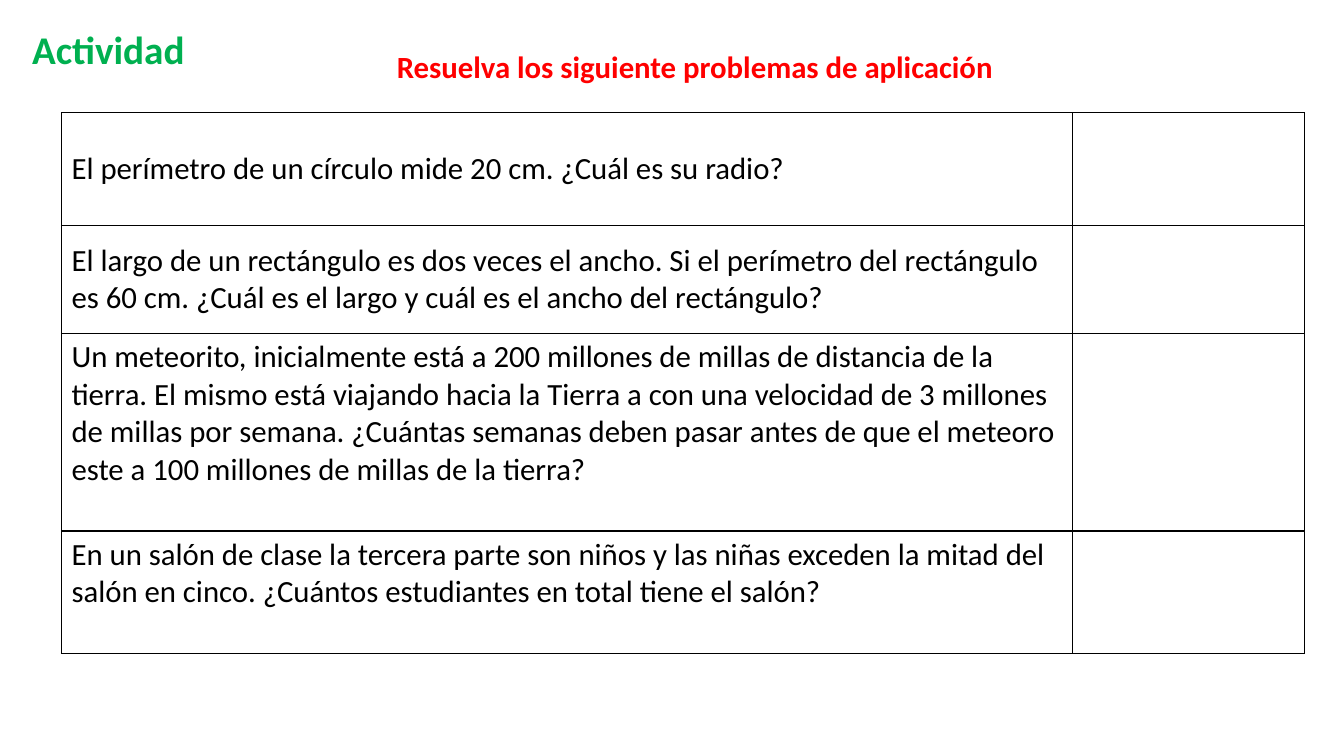
from lxml.etree import SubElement
from pptx import Presentation
from pptx.dml.color import RGBColor
from pptx.enum.text import MSO_ANCHOR as Anchor
from pptx.oxml.ns import qn
from pptx.util import Cm, Pt

PROBLEMS = [
    ("El perímetro de un círculo mide 20 cm. ¿Cuál es su radio?", 2.84, Anchor.MIDDLE),
    ("El largo de un rectángulo es dos veces el ancho. Si el perímetro del rectángulo "
     "es 60 cm. ¿Cuál es el largo y cuál es el ancho del rectángulo?", 2.72, Anchor.MIDDLE),
    ("Un meteorito, inicialmente está a 200 millones de millas de distancia de la tierra. "
     "El mismo está viajando hacia la Tierra a con una velocidad de 3 millones de millas "
     "por semana. ¿Cuántas semanas deben pasar antes de que el meteoro este a 100 millones "
     "de millas de la tierra?", 4.98, Anchor.TOP),
    ("En un salón de clase la tercera parte son niños y las niñas exceden la mitad del "
     "salón en cinco. ¿Cuántos estudiantes en total tiene el salón?", 3.08, Anchor.TOP),
]


def color(value):
    return RGBColor.from_string(value)


def write(frame, text, size=22, fill="000000", bold=False, spacing=1.0):
    paragraph = frame.paragraphs[0]
    paragraph.line_spacing = spacing
    run = paragraph.add_run()
    run.text = text
    run.font.name = "Calibri"
    run.font.size = Pt(size)
    run.font.bold = bold
    run.font.color.rgb = color(fill)


def add_heading(slide, box, text, wrap=True, anchor=Anchor.TOP, **style):
    frame = slide.shapes.add_textbox(*map(Cm, box)).text_frame
    frame.word_wrap = wrap
    frame.vertical_anchor = anchor
    write(frame, text, **style)


def style_cell(cell):
    properties = cell._tc.get_or_add_tcPr()
    for side in ("a:lnL", "a:lnR", "a:lnT", "a:lnB"):
        border = SubElement(properties, qn(side), w=str(Pt(1)))
        ink = SubElement(border, qn("a:solidFill"))
        SubElement(ink, qn("a:srgbClr"), val="000000")
    cell.fill.background()


def add_problems(slide, box, answer_width):
    left, top, width = box
    height = sum(row_height for _, row_height, _ in PROBLEMS)
    table = slide.shapes.add_table(
        len(PROBLEMS), 2, Cm(left), Cm(top), Cm(width), Cm(height)).table
    table.first_row = table.horz_banding = False
    table.columns[0].width = Cm(width - answer_width)
    table.columns[1].width = Cm(answer_width)
    for row, (problem, row_height, anchor) in zip(table.rows, PROBLEMS):
        row.height = Cm(row_height)
        for cell in row.cells:
            style_cell(cell)
        statement = row.cells[0]
        statement.vertical_anchor = anchor
        write(statement.text_frame, problem)


def main():
    deck = Presentation()
    deck.slide_width, deck.slide_height = Cm(33.87), Cm(19.05)
    slide = deck.slides.add_slide(deck.slide_layouts[6])
    add_heading(slide, (0.56, -0.53, 8.41, 3.68), "Actividad", anchor=Anchor.MIDDLE,
                size=28, fill="00B050", bold=True, spacing=0.9)
    add_problems(slide, (1.55, 2.84, 31.32), answer_width=5.84)
    add_heading(slide, (9.75, 1.07, 15.7, 1.19),
                "Resuelva los siguiente problemas de aplicación",
                wrap=False, fill="FF0000", bold=True)
    deck.save("out.pptx")


if __name__ == "__main__":
    main()
